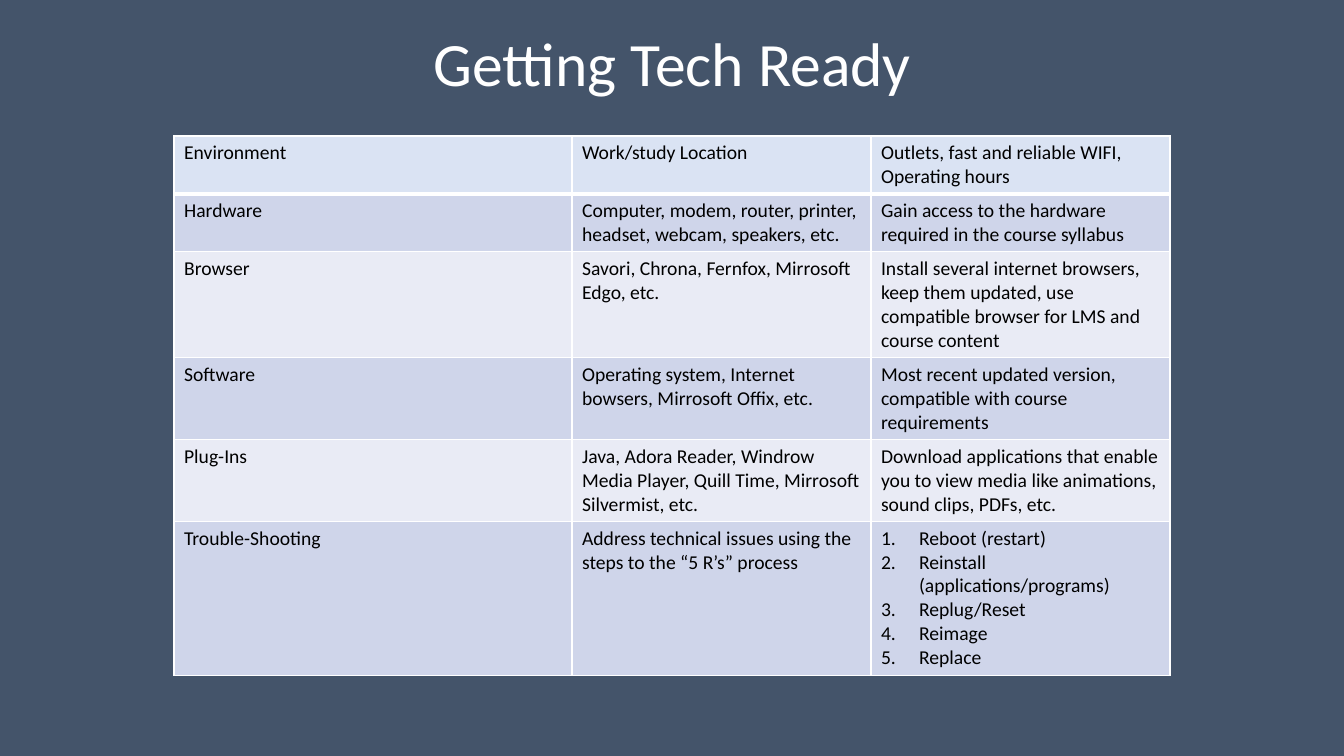
"""Build the "Getting Tech Ready" slide."""
import dataclasses

import lxml.etree
import pptx
import pptx.dml.color
import pptx.enum.text
import pptx.oxml.ns
import pptx.util

EMU_PER_PX = 914400 / 100.8
SLIDE_SIZE = (1344, 756)
TITLE_BOX = (93, 21, 1159, 92)
CHECKLIST_BOX = (174, 136, 996, 538)
COLUMN_WIDTHS = (398, 299, 299)
ROW_HEIGHTS = (58, 57, 106, 82, 81, 154)
LIST_INDENT = 38

CHECKLIST = [
    ("Environment", "Work/study Location",
     "Outlets, fast and reliable WIFI, Operating hours"),
    ("Hardware", "Computer, modem, router, printer, headset, webcam, speakers, etc.",
     "Gain access to the hardware required in the course syllabus"),
    ("Browser", "Savori, Chrona, Fernfox, Mirrosoft Edgo, etc.",
     "Install several internet browsers, keep them updated, use compatible "
     "browser for LMS and course content"),
    ("Software", "Operating system, Internet bowsers, Mirrosoft Offix, etc.",
     "Most recent updated version, compatible with course requirements"),
    ("Plug-Ins",
     "Java, Adora Reader, Windrow Media Player, Quill Time, Mirrosoft Silvermist, etc.",
     "Download applications that enable you to view media like animations, "
     "sound clips, PDFs, etc."),
    ("Trouble-Shooting",
     "Address technical issues using the steps to the “5 R’s” process",
     ["Reboot (restart)", "Reinstall (applications/programs)", "Replug/Reset",
      "Reimage", "Replace"]),
]


@dataclasses.dataclass(frozen=True)
class Theme:
    """Colours, font and type sizes of the slide."""
    background: str = "44546A"
    title: str = "FFFFFF"
    body: str = "000000"
    border: str = "FFFFFF"
    header_fill: str = "DAE3F3"
    band_fills: tuple = ("CFD5EA", "E9EBF5")
    font: str = "Calibri"
    title_size: int = 44
    body_size: int = 14
    thin: int = 1
    thick: int = 3


THEME = Theme()


def px(length):
    """Turn a length in px into EMU."""
    return pptx.util.Emu(round(length * EMU_PER_PX))


def rgb(code):
    """Turn a hex code into a colour."""
    return pptx.dml.color.RGBColor.from_string(code)


def add_child(parent, tag, **attributes):
    """Append a DrawingML element to its parent."""
    child = lxml.etree.SubElement(parent, pptx.oxml.ns.qn(tag))
    for name, value in attributes.items():
        child.set(name, str(value))
    return child


def write(frame, text, size=THEME.body_size, color=THEME.body,
          align=pptx.enum.text.PP_ALIGN.LEFT, spacing=None):
    """Write a string, or a list of strings as a numbered list."""
    numbered = isinstance(text, list)
    frame.text = "\n".join(text) if numbered else text
    frame.word_wrap = True
    for paragraph in frame.paragraphs:
        paragraph.alignment = align
        paragraph.line_spacing = spacing
        font = paragraph.runs[0].font
        font.name, font.size = THEME.font, pptx.util.Pt(size)
        font.bold = False
        font.color.rgb = rgb(color)
        if numbered:
            properties = paragraph._p.get_or_add_pPr()
            properties.set("marL", str(px(LIST_INDENT)))
            properties.set("indent", str(-px(LIST_INDENT)))
            add_child(properties, "a:buFont", typeface="+mj-lt")
            add_child(properties, "a:buAutoNum", type="arabicPeriod")


def set_borders(cell, **widths):
    """Draw the cell's sides in the given point widths."""
    properties = cell._tc.get_or_add_tcPr()
    for position, side in enumerate("LRTB"):
        width = pptx.util.Pt(widths.get(side, THEME.thin))
        line = add_child(properties, f"a:ln{side}", w=width)
        add_child(add_child(line, "a:solidFill"), "a:srgbClr", val=THEME.border)
        properties.insert(position, line)


def place_title(slide, box, text):
    """Place the centred title in its box."""
    title = slide.shapes.title
    title.left, title.top, title.width, title.height = map(px, box)
    write(title.text_frame, text, size=THEME.title_size, color=THEME.title,
          align=pptx.enum.text.PP_ALIGN.CENTER, spacing=0.9)
    title.text_frame.vertical_anchor = pptx.enum.text.MSO_ANCHOR.MIDDLE


def place_checklist(slide, box, entries):
    """Place the banded checklist table in its box."""
    table = slide.shapes.add_table(len(entries), len(COLUMN_WIDTHS), *map(px, box)).table
    for column, width in zip(table.columns, COLUMN_WIDTHS):
        column.width = px(width)
    for index, (row, height, entry) in enumerate(zip(table.rows, ROW_HEIGHTS, entries)):
        row.height = px(height)
        fill = THEME.band_fills[(index - 1) % 2] if index else THEME.header_fill
        rule = {0: {"B": THEME.thick}, 1: {"T": THEME.thick}}.get(index, {})
        for cell, text in zip(row.cells, entry):
            write(cell.text_frame, text)
            cell.fill.solid()
            cell.fill.fore_color.rgb = rgb(fill)
            set_borders(cell, **rule)


def main():
    """Build and save the slide."""
    deck = pptx.Presentation()
    deck.slide_width, deck.slide_height = map(px, SLIDE_SIZE)
    slide = deck.slides.add_slide(deck.slide_layouts.get_by_name("Title Only"))
    slide.background.fill.solid()
    slide.background.fill.fore_color.rgb = rgb(THEME.background)
    place_title(slide, TITLE_BOX, "Getting Tech Ready")
    place_checklist(slide, CHECKLIST_BOX, CHECKLIST)
    deck.save("out.pptx")


if __name__ == "__main__":
    main()
